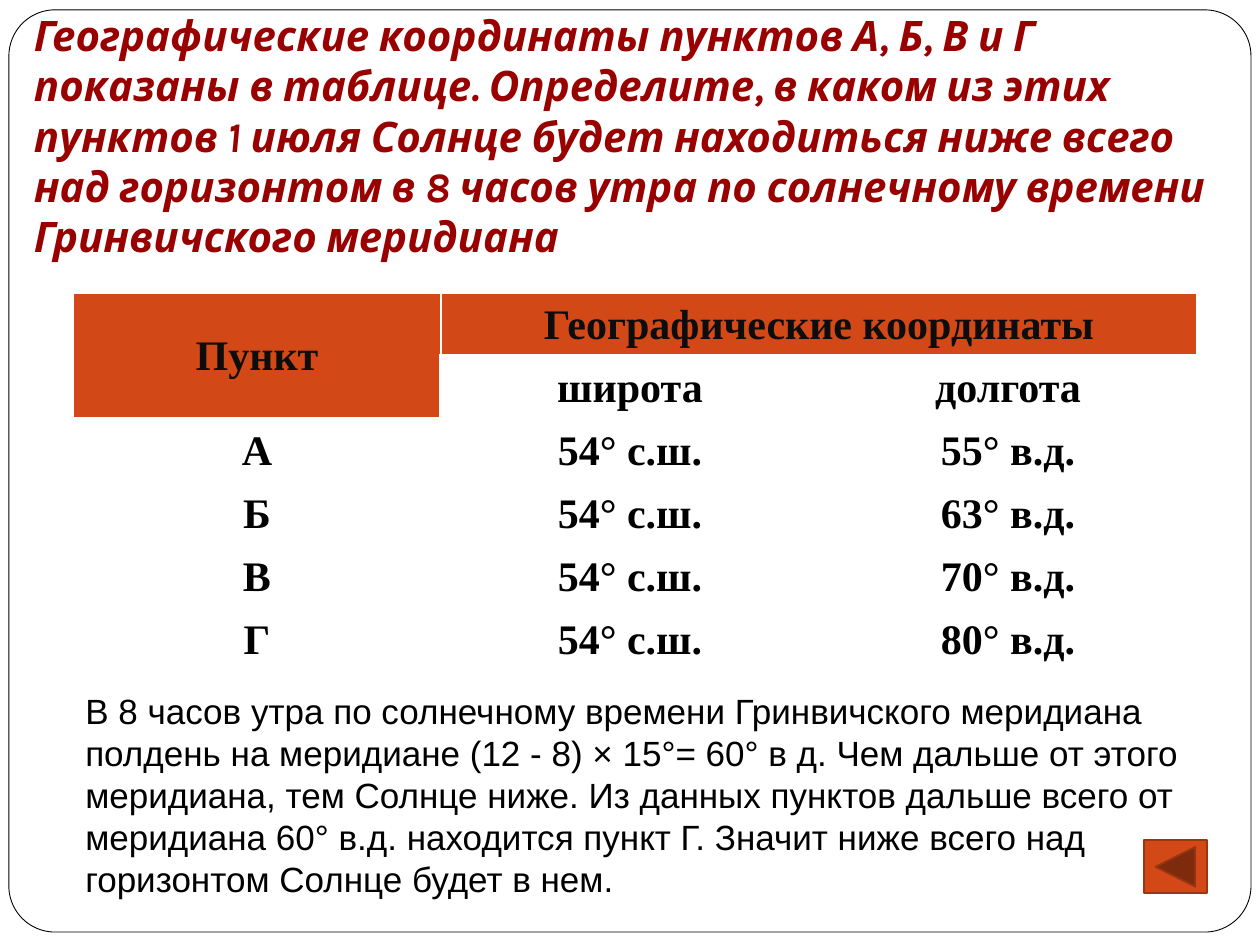
from typing import NamedTuple

from lxml import etree
from pptx import Presentation
from pptx import util as u
from pptx.dml import color as dml
from pptx.enum import shapes, text
from pptx.oxml import ns


class Box(NamedTuple):
    left: float
    top: float
    width: float
    height: float

    def cm(self) -> list:
        return [u.Cm(side) for side in self]


class Style(NamedTuple):
    font: str
    size: float
    color: str
    bold: bool = False
    slant: bool = False


class Form(NamedTuple):
    kind: shapes.MSO_SHAPE
    box: Box
    fill: str
    line: str
    width: float


WHITE, BLACK, RUST = "FFFFFF", "000000", "D34817"
TASK = Style("Karla", 24, "990000", True, True)
HEAD = Style("Times New Roman", 24, "0D0D0D", True)
CELL = HEAD._replace(color=BLACK)
NOTE = Style("Arial", 20, BLACK)

FRAME = Form(shapes.MSO_SHAPE.ROUNDED_RECTANGLE,
             Box(0.18, 0.2, 25.04, 18.59), WHITE, BLACK, 0.5)
BACK = Form(shapes.MSO_SHAPE.ACTION_BUTTON_BACK_OR_PREVIOUS,
            Box(23.06, 16.94, 1.27, 1.07), RUST, "9C3511", 1)

ROWS = [
    ("Пункт", "Географические координаты", ""),
    ("", "широта", "долгота"),
    ("А", "54° с.ш.", "55° в.д."),
    ("Б", "54° с.ш.", "63° в.д."),
    ("В", "54° с.ш.", "70° в.д."),
    ("Г", "54° с.ш.", "80° в.д."),
]
COLS = (7.42, 7.62, 7.62)
ROW = 1.27

QUERY = (
    "Географические координаты пунктов А, Б, В и Г показаны в таблице. "
    "Определите, в каком из этих пунктов 1 июля Солнце будет находиться "
    "ниже всего над горизонтом в 8 часов утра по солнечному времени "
    "Гринвичского меридиана"
)
REPLY = (
    "В 8 часов утра по солнечному времени Гринвичского меридиана полдень "
    "на меридиане (12 - 8) × 15°= 60° в д. Чем дальше от этого меридиана, "
    "тем Солнце ниже. Из данных пунктов дальше всего от меридиана 60° в.д. "
    "находится пункт Г. Значит ниже всего над горизонтом Солнце будет в нем."
)


def rgb(code: str) -> dml.RGBColor:
    return dml.RGBColor.from_string(code)


def paint(item, code: str) -> None:
    item.fill.solid()
    item.fill.fore_color.rgb = rgb(code)


def write(para, words: str, style: Style, align=text.PP_ALIGN.LEFT) -> None:
    para.alignment = align
    run = para.add_run()
    run.text = words
    font = run.font
    font.name, font.size = style.font, u.Pt(style.size)
    font.bold, font.italic = style.bold, style.slant
    font.color.rgb = rgb(style.color)


def draw(slide, form: Form):
    shape = slide.shapes.add_shape(form.kind, *form.box.cm())
    shape.shadow.inherit = False
    paint(shape, form.fill)
    shape.line.color.rgb = rgb(form.line)
    shape.line.width = u.Pt(form.width)
    return shape


def edge(cell, side: str, width: float) -> None:
    props = cell._tc.get_or_add_tcPr()
    line = etree.SubElement(props, ns.qn(f"a:ln{side}"), w=str(u.Pt(width)))
    fill = etree.SubElement(line, ns.qn("a:solidFill"))
    etree.SubElement(fill, ns.qn("a:srgbClr"), val=WHITE)


def thick(row: int, col: int, side: str) -> bool:
    last = 1 if col == 0 else 0
    below = side == "B" and row == last
    above = side == "T" and row == last + 1
    return below or above or (side == "L" and (row, col) == (1, 1))


def grid(slide) -> None:
    box = Box(1.47, 5.92, sum(COLS), ROW * len(ROWS))
    table = slide.shapes.add_table(len(ROWS), len(COLS), *box.cm()).table
    for col, width in zip(table.columns, COLS):
        col.width = u.Cm(width)
    table.cell(0, 0).merge(table.cell(1, 0))
    table.cell(0, 1).merge(table.cell(0, 2))
    for r, row in enumerate(ROWS):
        table.rows[r].height = u.Cm(ROW)
        for c, words in enumerate(row):
            cell = table.cell(r, c)
            head = r == 0 or (r == 1 and c == 0)
            for side in "LRTB":
                edge(cell, side, 3 if thick(r, c, side) else 1)
            paint(cell, RUST if head else WHITE)
            cell.vertical_anchor = text.MSO_ANCHOR.MIDDLE
            cell.margin_left = cell.margin_right = u.Cm(0.08)
            cell.margin_top = cell.margin_bottom = u.Cm(0.08)
            if words:
                write(cell.text_frame.paragraphs[0], words,
                      HEAD if head else CELL, text.PP_ALIGN.CENTER)


def title(slide) -> None:
    shape = slide.shapes.title
    shape.left, shape.top, shape.width, shape.height = Box(
        0.43, 0.43, 24.56, 5.08).cm()
    frame = shape.text_frame
    frame.word_wrap = True
    frame.auto_size = text.MSO_AUTO_SIZE.NONE
    frame.vertical_anchor = text.MSO_ANCHOR.BOTTOM
    frame.margin_bottom = u.Cm(0.25)
    para = frame.paragraphs[0]
    para.line_spacing = u.Pt(28.7)
    write(para, QUERY, TASK)


def note(slide) -> None:
    shape = slide.shapes.add_textbox(*Box(1.47, 13.77, 23.06, 4.52).cm())
    frame = shape.text_frame
    frame.word_wrap = True
    frame.auto_size = text.MSO_AUTO_SIZE.SHAPE_TO_FIT_TEXT
    write(frame.paragraphs[0], REPLY, NOTE)


def main() -> None:
    deck = Presentation()
    deck.slide_width, deck.slide_height = u.Cm(25.4), u.Cm(19.05)
    slide = deck.slides.add_slide(deck.slide_layouts[5])
    frame = draw(slide, FRAME)
    frame.adjustments[0] = 0.05
    slide.shapes.title._element.addprevious(frame._element)
    title(slide)
    grid(slide)
    note(slide)
    draw(slide, BACK)
    deck.save("out.pptx")


if __name__ == "__main__":
    main()
